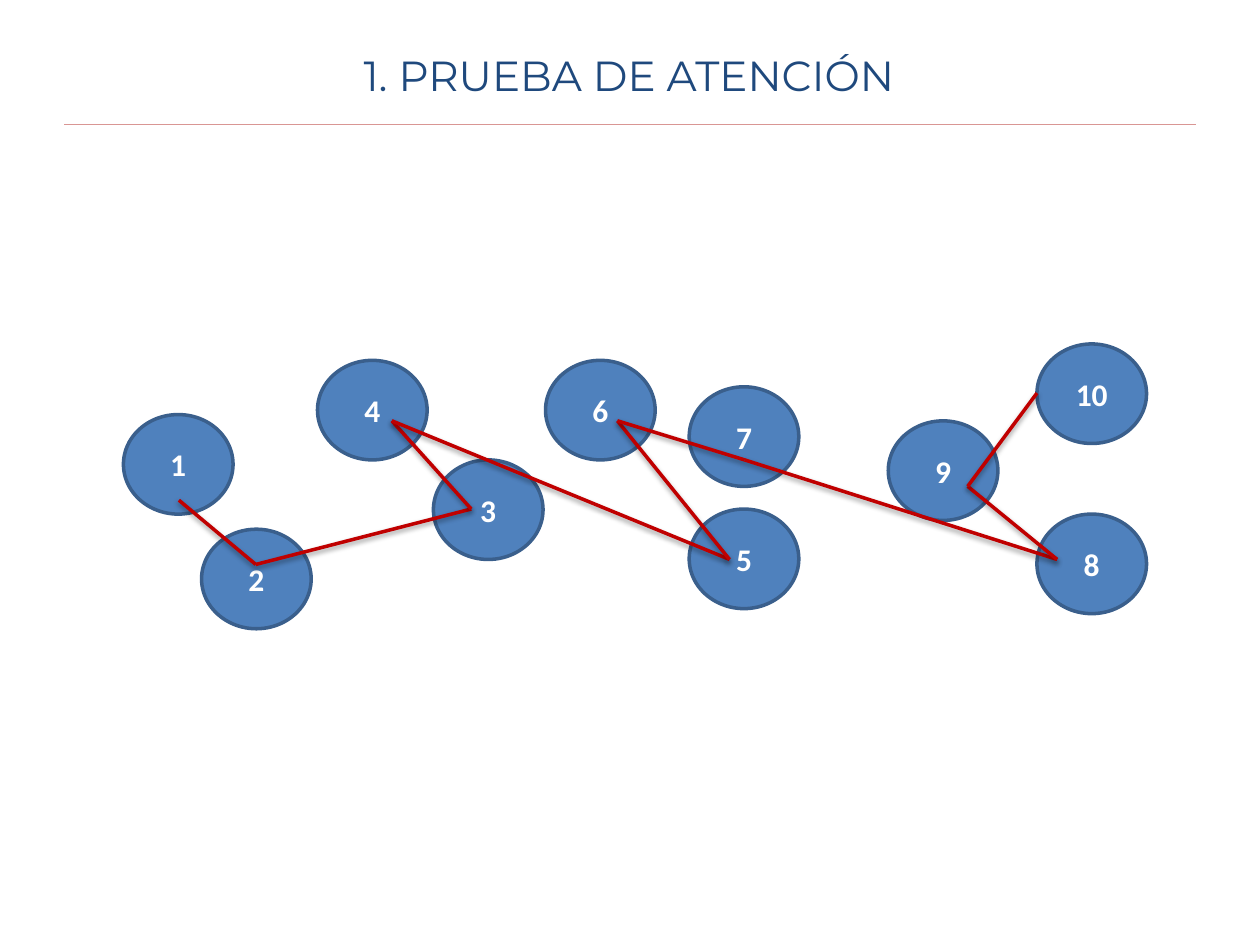
from itertools import pairwise

from lxml.etree import SubElement
from pptx import Presentation
from pptx.dml.color import RGBColor
from pptx.enum.shapes import MSO_CONNECTOR, MSO_SHAPE
from pptx.enum.text import MSO_ANCHOR, PP_ALIGN
from pptx.oxml.ns import qn
from pptx.util import Inches, Pt

COLUMNS, ROWS = 100, 75
CIRCLE_SIZE = (8.7, 7.9)

# Left and top of each numbered circle, in columns and rows, back to front
CIRCLES = {
    1: (9.8, 32.9), 4: (25.2, 28.6), 2: (16, 42), 3: (34.4, 36.5),
    5: (54.7, 40.4), 6: (43.3, 28.6), 7: (54.7, 30.7), 8: (82.3, 40.8),
    9: (70.5, 33.4), 10: (82.3, 27.3),
}

# Points that the trail joins, from circle 1 to circle 10
TRAIL = [
    (14.2, 39.7), (20.3, 44.8), (37.4, 40.4), (31.1, 33.4), (57.9, 44.4),
    (49, 33.4), (59.1, 36.5), (83.9, 44.4), (76.8, 38.6), (82.3, 31.2),
]


def rgb(value):
    return RGBColor.from_string(value)


class AttentionSlide:
    NAVY, BLUE, OUTLINE = "1F497D", "4F81BD", "3A5F8C"
    RULE, TRAIL, WHITE = "D99694", "C00000", "FFFFFF"
    TITLE_FONT, NUMBER_FONT = "Montserrat", "Calibri"

    def __init__(self, presentation):
        self.column = presentation.slide_width / COLUMNS
        self.row = presentation.slide_height / ROWS
        self.slide = presentation.slides.add_slide(presentation.slide_layouts[5])

    def place(self, across, down):
        """Turn columns and rows into slide lengths."""
        return round(across * self.column), round(down * self.row)

    def set_wording(self, shape, wording, font_name, size, color, bold=False):
        frame = shape.text_frame
        frame.text = wording
        frame.vertical_anchor = MSO_ANCHOR.MIDDLE
        paragraph = frame.paragraphs[0]
        paragraph.alignment = PP_ALIGN.CENTER
        font = paragraph.runs[0].font
        font.name, font.size, font.bold = font_name, Pt(size), bold
        font.color.rgb = rgb(color)

    def title(self, wording, corner, size):
        heading = self.slide.shapes.title
        heading.left, heading.top = self.place(*corner)
        heading.width, heading.height = self.place(*size)
        self.set_wording(heading, wording, self.TITLE_FONT, 24, self.NAVY)

    def circle(self, number, corner):
        circle = self.slide.shapes.add_shape(
            MSO_SHAPE.OVAL, *self.place(*corner), *self.place(*CIRCLE_SIZE))
        circle.shadow.inherit = False
        circle.fill.solid()
        circle.fill.fore_color.rgb = rgb(self.BLUE)
        circle.line.color.rgb = rgb(self.OUTLINE)
        circle.line.width = Pt(2)
        self.set_wording(
            circle, str(number), self.NUMBER_FONT, 18, self.WHITE, bold=True)

    def line(self, start, end, color, width, shadow=False):
        connector = self.slide.shapes.add_connector(
            MSO_CONNECTOR.STRAIGHT, *self.place(*start), *self.place(*end))
        connector.line.color.rgb = rgb(color)
        connector.line.width = Pt(width)
        effects = SubElement(connector._element.spPr, qn("a:effectLst"))
        if shadow:
            outer = SubElement(
                effects, qn("a:outerShdw"), blurRad=str(Pt(3.1)),
                dist=str(Pt(1.6)), dir="5400000", rotWithShape="0")
            black = SubElement(outer, qn("a:srgbClr"), val="000000")
            SubElement(black, qn("a:alpha"), val="38000")


def main():
    presentation = Presentation()
    presentation.slide_width, presentation.slide_height = Inches(10), Inches(7.5)
    test = AttentionSlide(presentation)
    test.title("1. PRUEBA DE ATENCIÓN", (4.9, 2.9), (90, 6.1))
    test.line((5.1, 9.9), (94.9, 9.9), test.RULE, 0.75)
    for number, corner in CIRCLES.items():
        test.circle(number, corner)
    for start, end in pairwise(TRAIL):
        test.line(start, end, test.TRAIL, 2, shadow=True)
    presentation.save("out.pptx")


if __name__ == "__main__":
    main()
